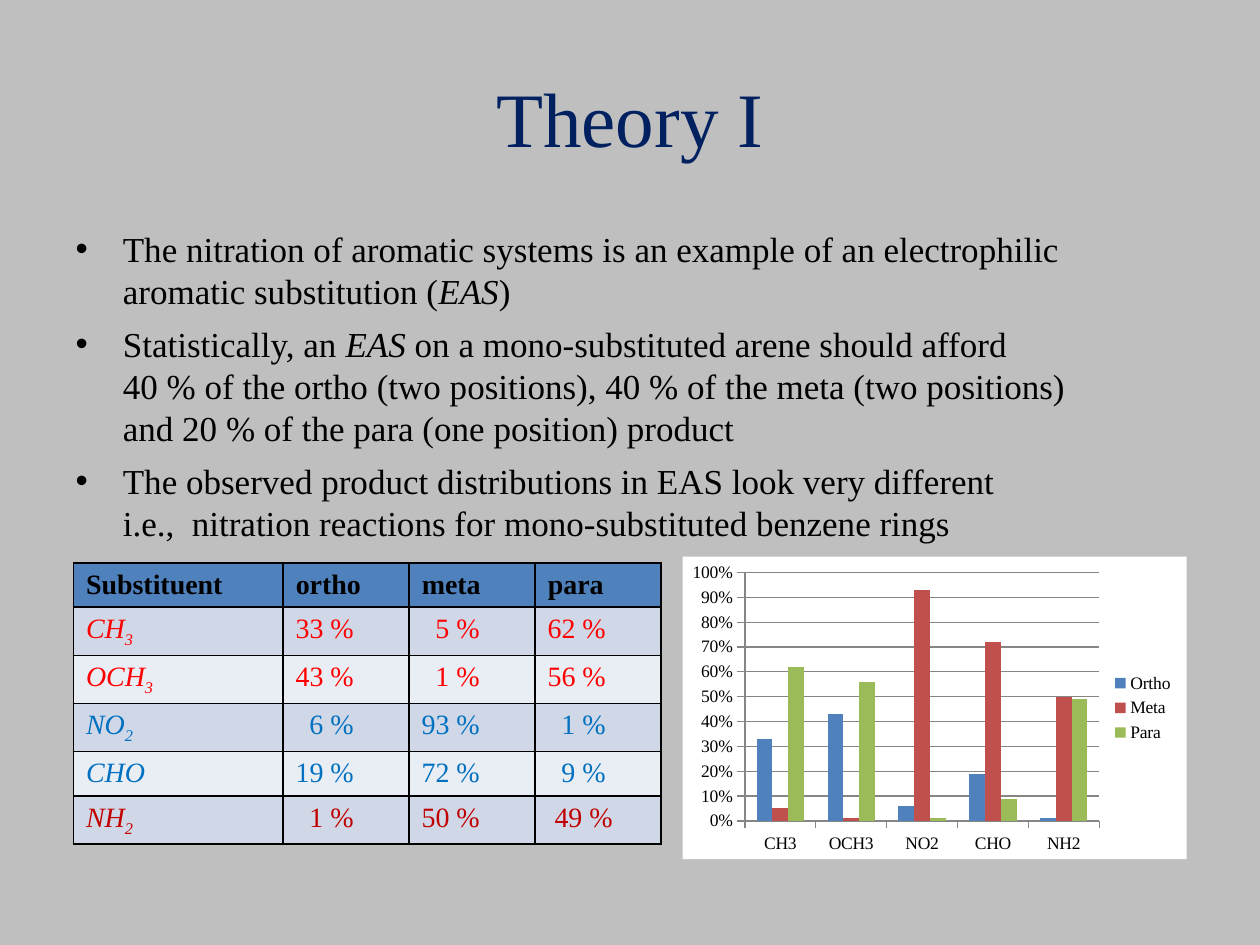
from lxml import etree
from pptx import Presentation
from pptx import util as u
from pptx.chart import data as chart_data
from pptx.dml import color
from pptx.enum import chart as charts, text
from pptx.oxml import ns, parse_xml

FONT = "Times New Roman"
COLORS = {
    "background": "BFBFBF", "title": "002060", "text": "000000",
    "header": "4F81BD", "odd": "D0D8E8", "even": "E9EDF4",
    "red": "FF0000", "blue": "0070C0", "dark red": "C00000",
    "Ortho": "4F81BD", "Meta": "C0504D", "Para": "9BBB59",
    "chart": "FFFFFF", "axis": "868686",
}
BULLETS = [
    [("The nitration of aromatic systems is an example of an electrophilic "
      "aromatic substitution (", False), ("EAS", True), (")", False)],
    [("Statistically, an ", False), ("EAS", True),
     (" on a mono-substituted arene should afford\n"
      "40 % of the ortho (two positions), 40 % of the meta (two positions)\n"
      "and 20 % of the para (one position) product", False)],
    [("The observed product distributions in EAS look very different\n"
      "i.e.,  nitration reactions for mono-substituted benzene rings", False)],
]
PRODUCTS = ["Ortho", "Meta", "Para"]
SUBSTITUENTS = [
    ("CH", "3", "red", (33, 5, 62)),
    ("OCH", "3", "red", (43, 1, 56)),
    ("NO", "2", "blue", (6, 93, 1)),
    ("CHO", "", "blue", (19, 72, 9)),
    ("NH", "2", "dark red", (1, 50, 49)),
]


def rgb(name):
    return color.RGBColor.from_string(COLORS[name])


def place(shape, box):
    shape.left, shape.top, shape.width, shape.height = map(u.Cm, box)


def add_run(paragraph, words, size, color_name, bold=False, italic=False):
    run = paragraph.add_run()
    run.text = words
    font = run.font
    font.name, font.size, font.bold, font.italic = FONT, u.Pt(size), bold, italic
    font.color.rgb = rgb(color_name)
    return run


def add_title(slide, box):
    shape = slide.shapes.title
    place(shape, box)
    frame = shape.text_frame
    frame.vertical_anchor = text.MSO_ANCHOR.MIDDLE
    paragraph = frame.paragraphs[0]
    paragraph.alignment = text.PP_ALIGN.CENTER
    add_run(paragraph, "Theory I", 44, "title")


def add_bullets(slide, box):
    shape = slide.placeholders[1]
    place(shape, box)
    frame = shape.text_frame
    frame.auto_size = text.MSO_AUTO_SIZE.NONE
    for index, parts in enumerate(BULLETS):
        paragraph = frame.add_paragraph() if index else frame.paragraphs[0]
        for words, italic in parts:
            for line_index, line in enumerate(words.split("\n")):
                if line_index:
                    paragraph.add_line_break()
                add_run(paragraph, line, 20, "text", italic=italic)


def format_cell(cell, fill_name):
    properties = cell._tc.get_or_add_tcPr()
    for index, side in enumerate(("lnL", "lnR", "lnT", "lnB")):
        line = etree.Element(ns.qn(f"a:{side}"), w=str(u.Pt(1)))
        fill = etree.SubElement(line, ns.qn("a:solidFill"))
        etree.SubElement(fill, ns.qn("a:srgbClr"), val=COLORS["text"])
        properties.insert(index, line)
    cell.fill.solid()
    cell.fill.fore_color.rgb = rgb(fill_name)


def add_yield_table(slide, box):
    row_count = len(SUBSTITUENTS) + 1
    frame = slide.shapes.add_table(row_count, 4, *map(u.Cm, box))
    table = frame.table
    for index, column in enumerate(table.columns):
        column.width = u.Cm(2.54 if index else box[2] - 3 * 2.54)
    for row in table.rows:
        row.height = u.Cm(box[3] / row_count)
    for index, words in enumerate(["Substituent"] + [p.lower() for p in PRODUCTS]):
        cell = table.cell(0, index)
        format_cell(cell, "header")
        add_run(cell.text_frame.paragraphs[0], words, 16, "text", bold=True)
    for row_index, (formula, count, color_name, values) in enumerate(SUBSTITUENTS, 1):
        for column_index in range(4):
            cell = table.cell(row_index, column_index)
            format_cell(cell, "odd" if row_index % 2 else "even")
            paragraph = cell.text_frame.paragraphs[0]
            if column_index:
                value = values[column_index - 1]
                cell.margin_left = u.Cm(0.25 if value > 9 else 0.53)
                add_run(paragraph, f"{value} %", 16, color_name)
                continue
            add_run(paragraph, formula, 16, color_name, italic=True)
            if count:
                run = add_run(paragraph, count, 16, color_name, italic=True)
                run.font._element.set("baseline", "-25000")
    table.cell(row_count - 1, 3).margin_left = u.Cm(0.39)


def add_yield_chart(slide, box):
    data = chart_data.CategoryChartData(number_format="0%")
    data.categories = [formula + count for formula, count, _, _ in SUBSTITUENTS]
    for index, product in enumerate(PRODUCTS):
        data.add_series(product, [row[3][index] / 100 for row in SUBSTITUENTS])
    chart = slide.shapes.add_chart(
        charts.XL_CHART_TYPE.COLUMN_CLUSTERED, *map(u.Cm, box), data).chart
    chart.has_title = False
    chart.font.name, chart.font.size = FONT, u.Pt(10)
    chart.font.color.rgb = rgb("text")
    chart.has_legend = True
    chart.legend.position = charts.XL_LEGEND_POSITION.RIGHT
    chart.legend.include_in_layout = False
    plot = chart.plots[0]
    plot.gap_width, plot.overlap, plot.vary_by_categories = 150, 0, False
    for series in plot.series:
        series.format.fill.solid()
        series.format.fill.fore_color.rgb = rgb(series.name)
    value_axis = chart.value_axis
    value_axis.minimum_scale, value_axis.maximum_scale = 0, 1
    value_axis.major_unit = 0.1
    value_axis.has_major_gridlines = True
    value_axis.tick_labels.number_format = "0%"
    value_axis.tick_labels.number_format_is_linked = False
    for axis in (value_axis, chart.category_axis):
        axis.major_tick_mark = charts.XL_TICK_MARK.OUTSIDE
        axis.format.line.color.rgb = rgb("axis")
    value_axis.major_gridlines.format.line.color.rgb = rgb("axis")
    chart.element.find(ns.qn("c:chart")).addnext(parse_xml(
        f'<c:spPr {ns.nsdecls("c", "a")}><a:solidFill><a:srgbClr val="{COLORS["chart"]}"/>'
        '</a:solidFill><a:ln><a:noFill/></a:ln></c:spPr>'))


def main():
    presentation = Presentation()
    presentation.slide_width, presentation.slide_height = u.Cm(25.4), u.Cm(19.05)
    slide = presentation.slides.add_slide(presentation.slide_layouts[1])
    slide.background.fill.solid()
    slide.background.fill.fore_color.rgb = rgb("background")
    add_title(slide, (1.27, 0.76, 22.86, 3.18))
    add_bullets(slide, (1.27, 4.45, 22.86, 12.57))
    add_yield_table(slide, (1.48, 11.35, 11.85, 5.34))
    add_yield_chart(slide, (13.76, 11.22, 10.16, 6.1))
    presentation.save("out.pptx")


if __name__ == "__main__":
    main()
